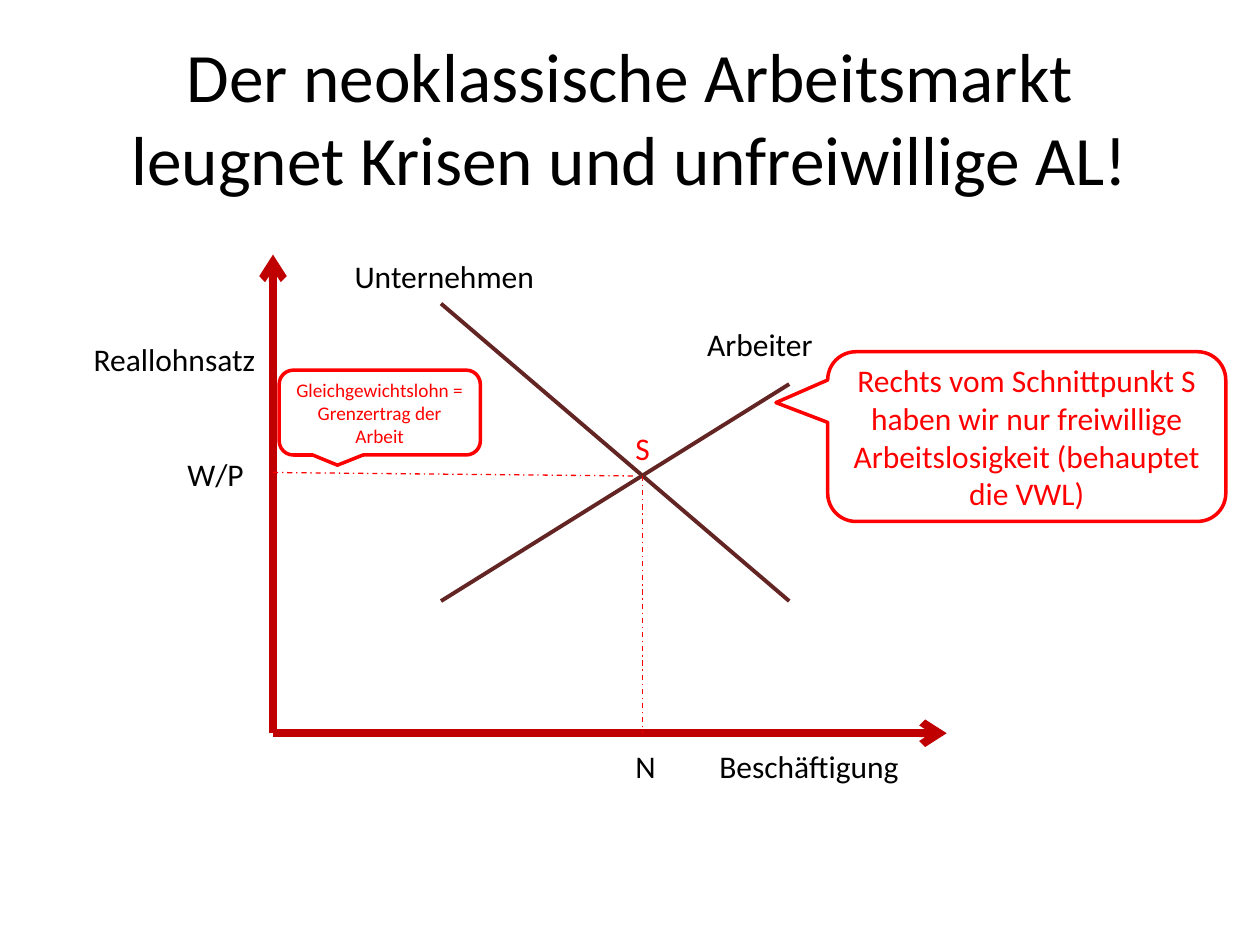
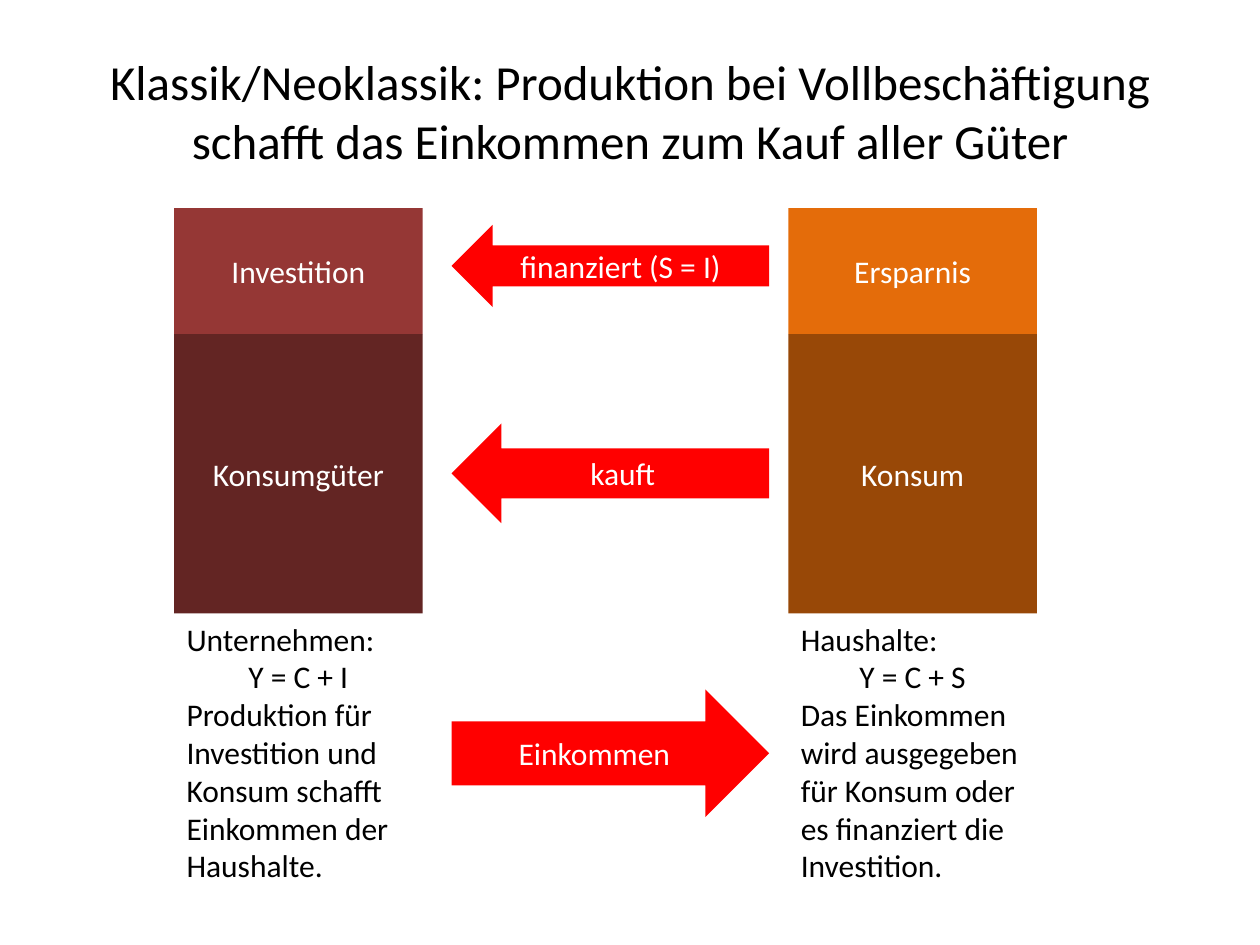
from lxml.etree import SubElement
from pptx import Presentation
from pptx.dml.color import RGBColor
from pptx.enum.dml import MSO_LINE
from pptx.enum.shapes import MSO_CONNECTOR, MSO_SHAPE as SHAPE
from pptx.enum.text import MSO_ANCHOR as ANCHOR, PP_ALIGN as ALIGN
from pptx.oxml.ns import qn
from pptx.util import Pt

FONT = "Calibri"
BLACK, WHITE, RED = "000000", "FFFFFF", "FF0000"
AXIS, CURVE = "C00000", "632523"


def rgb(color):
    return RGBColor.from_string(color)


def write(frame, lines, size=18, color=BLACK, align=ALIGN.LEFT, anchor=ANCHOR.TOP, wrap=True):
    frame.word_wrap = wrap
    frame.vertical_anchor = anchor
    frame.text = "\n".join(lines)
    for line in frame.paragraphs:
        line.alignment = align
        line.font.name, line.font.size = FONT, Pt(size)
        line.font.color.rgb = rgb(color)


def add_text(slide, box, lines, **style):
    text = slide.shapes.add_textbox(*map(Pt, box))
    write(text.text_frame, lines, **style)
    return text.text_frame


def add_title(slide, title, top, height, size):
    add_text(slide, (36, top, 648, height), [title], size=size,
             align=ALIGN.CENTER, anchor=ANCHOR.MIDDLE)


def add_block(slide, kind, box, lines, fill=None, line=None, size=18, color=WHITE):
    block = slide.shapes.add_shape(kind, *map(Pt, box))
    block.shadow.inherit = False
    if fill:
        block.fill.solid()
        block.fill.fore_color.rgb = rgb(fill)
    else:
        block.fill.background()
    if line:
        block.line.color.rgb = rgb(line)
        block.line.width = Pt(2)
    else:
        block.line.fill.background()
    write(block.text_frame, lines, size, color, ALIGN.CENTER, ANCHOR.MIDDLE)
    return block


def add_line(slide, start, end, color, width, dash=None, arrow=False):
    line = slide.shapes.add_connector(MSO_CONNECTOR.STRAIGHT, *map(Pt, (*start, *end)))
    line.line.color.rgb = rgb(color)
    line.line.width = Pt(width)
    if dash:
        line.line.dash_style = dash
    if arrow:
        SubElement(line.line._get_or_add_ln(), qn("a:tailEnd"), type="arrow")
    SubElement(line._element.spPr, qn("a:effectLst"))


def add_callout(slide, box, tip, lines, size):
    """Outlined speech bubble whose tip is given as a share of its size, from its centre."""
    callout = add_block(slide, SHAPE.ROUNDED_RECTANGULAR_CALLOUT, box, lines,
                        line=RED, size=size, color=RED)
    callout.adjustments[0], callout.adjustments[1] = tip
    callout.text_frame.margin_left = callout.text_frame.margin_right = Pt(4)


def draw_labour_market(slide, left, top, width, height):
    def at(x, y):
        return left + x, top + y

    # Axes
    origin = at(0, height)
    for end in (at(width, height), at(0, 0)):
        add_line(slide, origin, end, AXIS, 4.5, arrow=True)

    # Demand and supply curves
    add_line(slide, at(96, 28), at(295, 198), CURVE, 2.25)
    add_line(slide, at(295, 74), at(96, 198), CURVE, 2.25)

    # Equilibrium wage and employment
    add_line(slide, at(0, 124.5), at(207, 126.5), RED, 0.75, MSO_LINE.DASH_DOT)
    add_line(slide, at(211, 126.5), at(211, height), RED, 0.75, MSO_LINE.DASH_DOT)

    # Labels
    for label, x, y, label_width, color in (
            ("Reallohnsatz", -109.5, 45.5, 108, BLACK),
            ("W/P", -56, 111, 47, BLACK),
            ("Unternehmen", 39.5, -2, 118, BLACK),
            ("Arbeiter", 241, 36.5, 76, BLACK),
            ("S", 200, 96, 23, RED),
            ("N", 200, 278, 26, BLACK),
            ("Beschäftigung", 248, 278, 117, BLACK)):
        add_text(slide, (*at(x, y), label_width, 29), [label], color=color, wrap=False)

    # Comments
    add_callout(slide, (*at(3.5, 66), 115, 48.5), (-0.21, 0.62),
                ["Gleichgewichtslohn =", "Grenzertrag der", "Arbeit"], 11)
    add_callout(slide, (*at(317, 55.5), 227.5, 97), (-0.63, -0.2),
                ["Rechts vom Schnittpunkt S haben wir nur freiwillige "
                 "Arbeitslosigkeit (behauptet die VWL)"], 18)


def draw_sector(slide, left, top, width, parts, caption):
    """Stack of coloured parts with a caption below."""
    for name, height, fill in parts:
        add_block(slide, SHAPE.RECTANGLE, (left, top, width, height), [name], fill)
        top += height
    frame = add_text(slide, (left, top, width, 160), caption)
    frame.paragraphs[1].alignment = ALIGN.CENTER


def draw_flows(slide, left, top, width):
    for name, kind, y, height in (
            ("finanziert (S = I)", SHAPE.LEFT_ARROW, 9.5, 47),
            ("kauft", SHAPE.LEFT_ARROW, 123, 57),
            ("Einkommen", SHAPE.RIGHT_ARROW, 275, 73)):
        add_block(slide, kind, (left, top + y, width, height), [name], RED)


def labour_market_slide(slide):
    add_title(slide, "Der neoklassische Arbeitsmarkt\vleugnet Krisen und unfreiwillige AL!",
              21.6, 90, 39.6)
    draw_labour_market(slide, 156, 145.5, 385, 273.5)


def income_slide(slide):
    add_title(slide, "Klassik/Neoklassik: Produktion bei Vollbeschäftigung "
                     "schafft das Einkommen zum Kauf aller Güter", 15, 96.5, 28)
    top, sector_width = 119, 142
    draw_sector(slide, 99.5, top, sector_width,
                [("Investition", 72, "953735"), ("Konsumgüter", 159.5, CURVE)],
                ["Unternehmen:", "Y = C + I",
                 "Produktion für Investition und Konsum schafft Einkommen der Haushalte."])
    draw_sector(slide, 450.5, top, sector_width,
                [("Ersparnis", 72, "E46C0A"), ("Konsum", 159.5, "984807")],
                ["Haushalte:", "Y = C + S",
                 "Das Einkommen wird ausgegeben für Konsum oder es finanziert die Investition."])
    draw_flows(slide, 258, top, 181.5)


def main():
    deck = Presentation()
    deck.slide_width, deck.slide_height = Pt(720), Pt(540)
    for build in (labour_market_slide, income_slide):
        build(deck.slides.add_slide(deck.slide_layouts[6]))
    deck.save("out.pptx")


if __name__ == "__main__":
    main()
